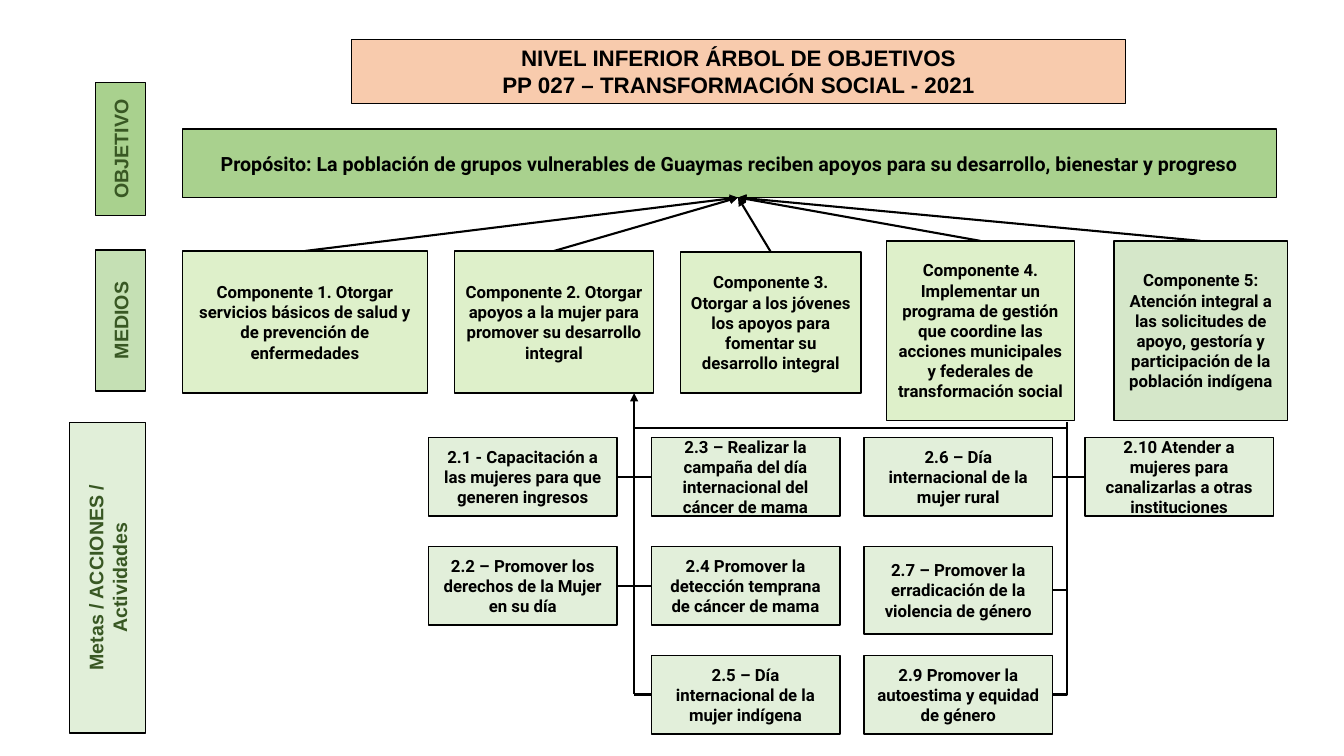
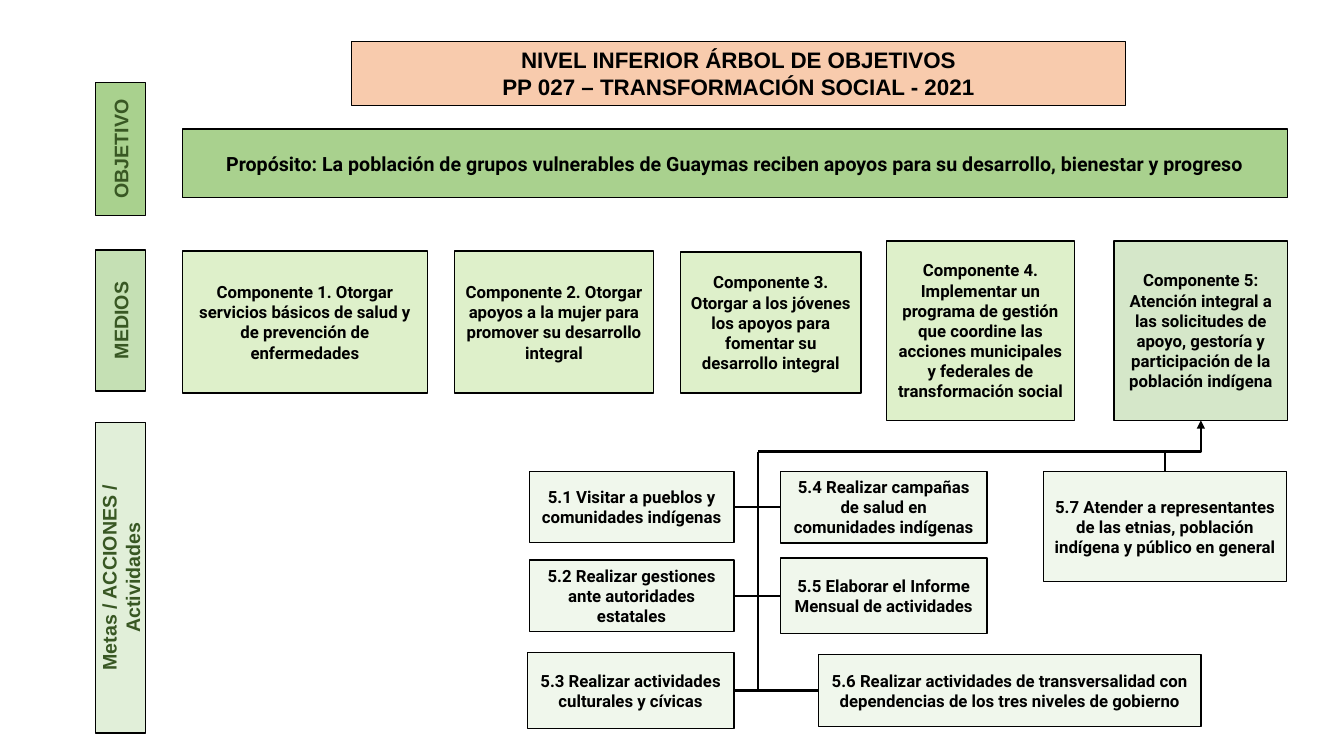
from collections import namedtuple

from lxml import etree
from pptx import Presentation
from pptx.dml.color import RGBColor
from pptx.enum import shapes, text
from pptx.oxml import ns
from pptx.util import Inches, Pt

COLORS = {
    "ink": "000000", "label": "385723", "title": "F8CBAD", "purpose": "A9D18E",
    "soft": "C5E0B4", "component": "92D050", "component5": "70AD47",
}
TITLE = ["NIVEL INFERIOR ÁRBOL DE OBJETIVOS", "PP 027 – TRANSFORMACIÓN SOCIAL - 2021"]
PURPOSE = ("Propósito: La población de grupos vulnerables de Guaymas reciben apoyos "
           "para su desarrollo, bienestar y progreso")
LABEL_RIGHT, LABEL_WIDTH = 1.44, 0.49


class Area(namedtuple("Area", "left top width height")):
    """A rectangle in inches that knows its edges and centre lines."""

    @property
    def right(self):
        return self.left + self.width

    @property
    def bottom(self):
        return self.top + self.height

    @property
    def center(self):
        return self.left + self.width / 2

    @property
    def middle(self):
        return self.top + self.height / 2


# Area, colour, opacity in percent, text
COMPONENTS = [
    (Area(1.81, 2.49, 2.43, 1.41), "component", 30,
     "Componente 1. Otorgar servicios básicos de salud y de prevención de enfermedades"),
    (Area(4.51, 2.49, 1.97, 1.41), "component", 30,
     "Componente 2. Otorgar apoyos a la mujer para promover su desarrollo integral"),
    (Area(6.75, 2.5, 1.79, 1.4), "component", 30,
     "Componente 3. Otorgar a los jóvenes los apoyos para fomentar su desarrollo integral"),
    (Area(8.79, 2.39, 1.87, 1.78), "component", 30,
     "Componente 4. Implementar un programa de gestión que coordine las acciones "
     "municipales y federales de transformación social"),
    (Area(11.05, 2.39, 1.72, 1.78), "component5", 29,
     "Componente 5: Atención integral a las solicitudes de apoyo, gestoría y "
     "participación de la población indígena"),
]

# Women's activities: one list of texts for each column, from top to bottom
WOMEN_LEFTS = [4.25, 6.46, 8.57, 10.76]
WOMEN_COLUMNS = [
    ["2.1 - Capacitación a las mujeres para que generen ingresos",
     "2.2 – Promover los derechos de la Mujer en su día"],
    ["2.3 – Realizar la campaña del día internacional del cáncer de mama",
     "2.4 Promover la detección temprana de cáncer de mama",
     "2.5 – Día internacional de la mujer indígena"],
    ["2.6 – Día internacional de la mujer rural",
     "2.7 – Promover la erradicación de la violencia de género",
     "2.9 Promover la autoestima y equidad de género"],
    ["2.10 Atender a mujeres para canalizarlas a otras instituciones"],
]
WOMEN_TOP, WOMEN_STEP = 4.34, 1.08
WOMEN_WIDTH, WOMEN_HEIGHT = 1.87, 0.78
TALL_HEIGHTS = {(2, 1): 0.87}  # (column, row) of the taller box

# Indigenous activities: middle of the row, then (left, width, height, text) of its pair
INDIGENOUS_ROWS = [
    (5.03, [(5.25, 2.03, 0.7, "5.1 Visitar a pueblos y comunidades indígenas"),
            (7.74, 2.05, 0.71, "5.4 Realizar campañas de salud en comunidades indígenas")]),
    (5.91, [(5.25, 2.03, 0.71, "5.2 Realizar gestiones ante autoridades estatales"),
            (7.74, 2.05, 0.75, "5.5 Elaborar el Informe Mensual de actividades")]),
    (6.85, [(5.23, 2.05, 0.75, "5.3 Realizar actividades culturales y cívicas"),
            (8.12, 3.79, 0.71, "5.6 Realizar actividades de transversalidad con "
                               "dependencias de los tres niveles de gobierno")]),
]
REPRESENTATIVES_AREA = Area(10.35, 4.68, 2.41, 1.09)
REPRESENTATIVES = ("5.7 Atender a representantes de las etnias, población indígena "
                   "y público en general")


def rgb(name):
    return RGBColor.from_string(COLORS[name])


def place(area):
    return [Inches(length) for length in area]


def paint(shape, color, line_width, opacity=100):
    shape.fill.solid()
    shape.fill.fore_color.rgb = rgb(color)
    if opacity < 100:
        fill_color = shape._element.spPr.find(ns.qn("a:solidFill"))[0]
        etree.SubElement(fill_color, ns.qn("a:alpha")).set("val", str(opacity * 1000))
    shape.line.color.rgb = rgb("ink")
    shape.line.width = Pt(line_width)


def write(frame, lines, size, font="Roboto", color="ink", anchor=text.MSO_ANCHOR.MIDDLE):
    frame.word_wrap = True
    frame.auto_size = text.MSO_AUTO_SIZE.NONE
    frame.vertical_anchor = anchor
    for index, line in enumerate(lines):
        paragraph = frame.add_paragraph() if index else frame.paragraphs[0]
        paragraph.alignment = text.PP_ALIGN.CENTER
        run = paragraph.add_run()
        run.text = line
        run.font.name, run.font.size, run.font.bold = font, Pt(size), True
        run.font.color.rgb = rgb(color)


def add_title(slide, area):
    title = slide.shapes.title
    title.left, title.top, title.width, title.height = place(area)
    paint(title, "title", 0.75)
    write(title.text_frame, TITLE, 16, "Arial", anchor=text.MSO_ANCHOR.TOP)


def add_box(slide, area, fill, content, opacity=100, size=12, **text_style):
    box = slide.shapes.add_shape(shapes.MSO_SHAPE.FLOWCHART_PROCESS, *place(area))
    box.shadow.inherit = False
    paint(box, fill, 1, opacity)
    write(box.text_frame, [content], size, **text_style)
    return box


def add_side_label(slide, top, height, content, fill, width=LABEL_WIDTH, opacity=100):
    """Add a label that reads upwards; top, height and width are as seen."""
    seen = Area(LABEL_RIGHT - width, top, width, height)
    unturned = Area(seen.center - height / 2, seen.middle - width / 2, height, width)
    label = add_box(slide, unturned, fill, content, opacity, 14, font="Arial", color="label")
    label.rotation = 270


def add_link(slide, start, end, arrow=False, bent=False):
    """Join two points; a bent link runs across first, then up."""
    kind = shapes.MSO_CONNECTOR.ELBOW if bent else shapes.MSO_CONNECTOR.STRAIGHT
    link = slide.shapes.add_connector(kind, *place(start + end))
    link.line.color.rgb = rgb("ink")
    link.line.width = Pt(1.5)
    properties = link._element.spPr
    if bent:
        properties.find(ns.qn("a:prstGeom")).set("prst", "bentConnector2")
    if arrow:
        outline = properties.find(ns.qn("a:ln"))
        etree.SubElement(outline, ns.qn("a:tailEnd")).set("type", "triangle")
    etree.SubElement(properties, ns.qn("a:effectLst"))


def add_tree_slide(prs, title_top, purpose, actions_width):
    """Add a slide with the parts that both trees share."""
    slide = prs.slides.add_slide(prs.slide_layouts[5])
    add_title(slide, Area(3.49, title_top, 7.67, 0.64))
    add_side_label(slide, 0.82, 1.32, "OBJETIVO", "purpose")
    add_side_label(slide, 2.48, 1.4, "MEDIOS", "soft")
    add_side_label(slide, 4.19, 3.08, "Metas / ACCIONES / Actividades", "soft",
                   actions_width, opacity=50)
    add_box(slide, purpose, "purpose", PURPOSE, size=14)
    for area, fill, opacity, content in COMPONENTS:
        add_box(slide, area, fill, content, opacity)
    return slide


def add_women_activities(slide):
    """Add the activity boxes and return their areas, column by column."""
    columns = []
    for column, (left, contents) in enumerate(zip(WOMEN_LEFTS, WOMEN_COLUMNS)):
        areas = []
        for row, content in enumerate(contents):
            height = TALL_HEIGHTS.get((column, row), WOMEN_HEIGHT)
            area = Area(left, WOMEN_TOP + row * WOMEN_STEP, WOMEN_WIDTH, height)
            add_box(slide, area, "soft", content, opacity=49)
            areas.append(area)
        columns.append(areas)
    return columns


def add_women_slide(prs):
    purpose = Area(1.81, 1.28, 10.85, 0.68)
    slide = add_tree_slide(prs, 0.39, purpose, actions_width=0.75)
    for component, *_ in COMPONENTS:
        add_link(slide, (component.center, component.top), (7.32, purpose.bottom), arrow=True)

    first, second, third, fourth = add_women_activities(slide)
    left_trunk, right_trunk = 6.29, 10.58
    bus, right_trunk_top = 4.25, 4.19
    component_foot = COMPONENTS[1][0].bottom

    add_link(slide, (left_trunk, second[-1].middle), (left_trunk, component_foot), arrow=True)
    add_link(slide, (left_trunk, bus), (right_trunk, bus))
    for left_box, right_box in zip(first, second):
        add_link(slide, (left_box.right, right_box.middle), (right_box.left, right_box.middle))
    add_link(slide, (left_trunk, second[-1].middle), (second[-1].left, second[-1].middle))

    branches = [(box.right, box.middle) for box in third]
    branches += [(box.left, box.middle) for box in fourth]
    for branch in branches:
        add_link(slide, branch, (right_trunk, right_trunk_top), bent=True)


def add_indigenous_slide(prs):
    slide = add_tree_slide(prs, 0.41, Area(1.81, 1.28, 10.96, 0.68), LABEL_WIDTH)
    trunk, bus = 7.52, 4.48
    for middle, pair in INDIGENOUS_ROWS:
        areas = []
        for left, width, height, content in pair:
            area = Area(left, middle - height / 2, width, height)
            add_box(slide, area, "soft", content, opacity=25)
            areas.append(area)
        left_box, right_box = areas
        add_link(slide, (left_box.right, middle), (right_box.left, middle))
    last_middle = INDIGENOUS_ROWS[-1][0]
    add_link(slide, (trunk, bus), (trunk, last_middle))

    add_box(slide, REPRESENTATIVES_AREA, "soft", REPRESENTATIVES, opacity=25)
    branch = REPRESENTATIVES_AREA.center
    add_link(slide, (branch, bus), (branch, REPRESENTATIVES_AREA.top))
    component = COMPONENTS[-1][0]
    add_link(slide, (trunk, bus), (component.center, component.bottom), arrow=True, bent=True)


def main():
    prs = Presentation()
    prs.slide_width, prs.slide_height = Inches(13.33), Inches(7.5)
    add_women_slide(prs)
    add_indigenous_slide(prs)
    prs.save("out.pptx")


if __name__ == "__main__":
    main()
